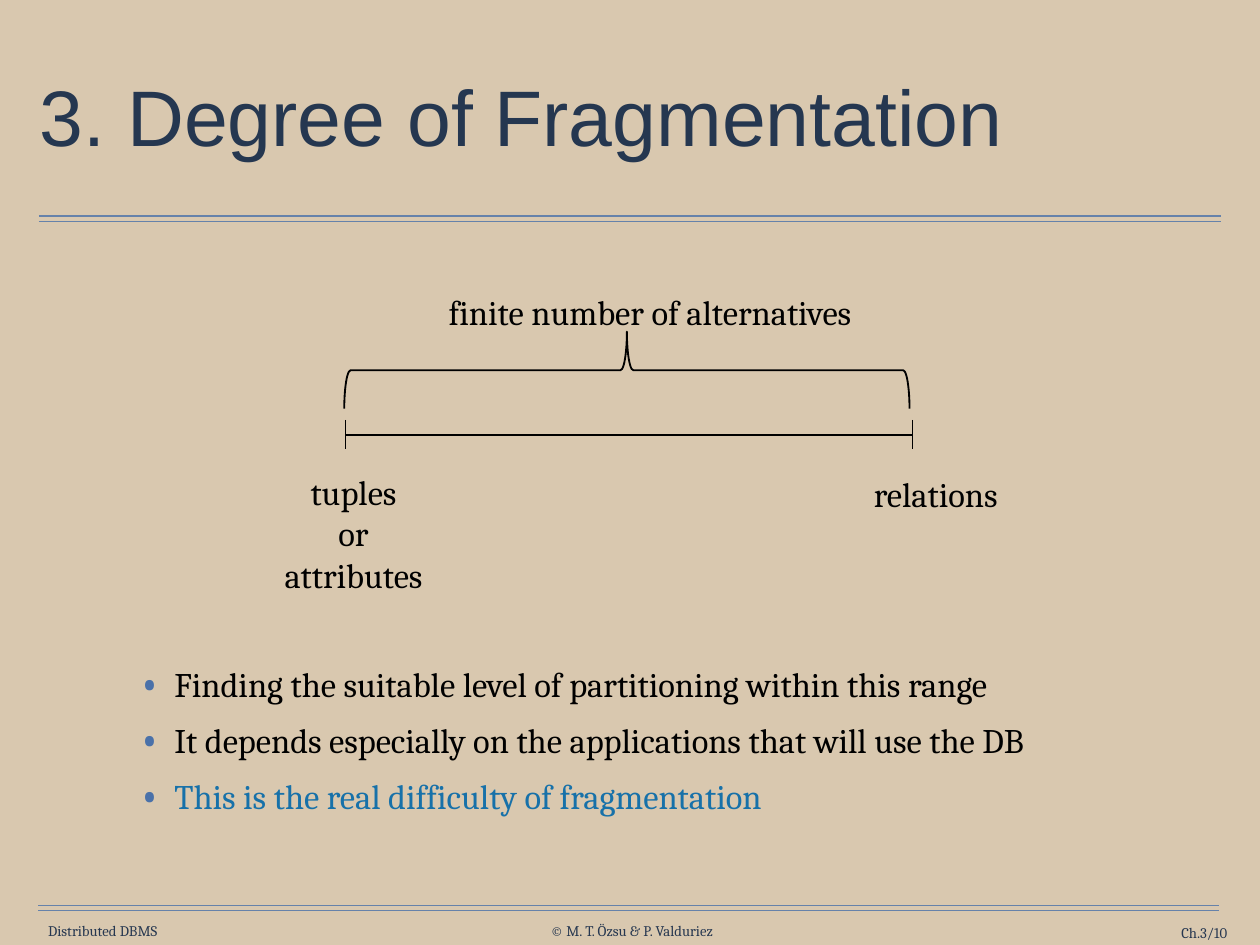
from dataclasses import dataclass

import pptx
import pptx.dml.color
import pptx.enum.shapes
import pptx.enum.text
import pptx.oxml
import pptx.oxml.ns
import pptx.util

ALIGN = pptx.enum.text.PP_ALIGN
ANCHOR = pptx.enum.text.MSO_ANCHOR
PIXELS_PER_INCH = 100


@dataclass(frozen=True)
class Theme:
    background: str = "D9C8AF"
    rule: str = "6682AA"
    heading: str = "253750"
    footer: str = "263750"
    ink: str = "000000"
    accent: str = "1771A9"
    bullet: str = "4A71A9"
    heading_font: str = "Arial"
    body_font: str = "Cambria"
    heading_size: int = 64
    body_size: int = 28
    footer_size: int = 12


@dataclass(frozen=True)
class Box:
    left: int
    top: int
    width: int
    height: int

    def inner(self, left, top, width, height):
        return Box(self.left + left, self.top + top, width, height)

    def lengths(self):
        return [px(value) for value in (self.left, self.top, self.width, self.height)]


THEME = Theme()


def px(value):
    return pptx.util.Emu(value * pptx.util.Inches(1) // PIXELS_PER_INCH)


def color(value):
    return pptx.dml.color.RGBColor.from_string(value)


def add_line(slide, box, line_color, weight):
    line = slide.shapes.add_connector(
        pptx.enum.shapes.MSO_CONNECTOR.STRAIGHT,
        px(box.left), px(box.top),
        px(box.left + box.width), px(box.top + box.height),
    )
    line.line.color.rgb = color(line_color)
    line.line.width = pptx.util.Pt(weight)
    properties = line._element.spPr
    properties.append(pptx.oxml.parse_xml(
        f"<a:effectLst {pptx.oxml.ns.nsdecls('a')}/>"))


def add_double_rule(slide, box):
    for offset in (0, 6):
        add_line(slide, box.inner(0, offset, box.width, 0), THEME.rule, 1)


def set_font(paragraph, name, size, font_color):
    paragraph.font.name = name
    paragraph.font.size = pptx.util.Pt(size)
    paragraph.font.color.rgb = color(font_color)


def add_text(slide, box, lines, size=THEME.body_size, font_color=THEME.ink,
             name=THEME.body_font, align=ALIGN.CENTER, anchor=ANCHOR.TOP,
             margins=(10, 5), wrap=False):
    frame = slide.shapes.add_textbox(*box.lengths()).text_frame
    frame.word_wrap = wrap
    frame.vertical_anchor = anchor
    frame.margin_left = frame.margin_right = px(margins[0])
    frame.margin_top = frame.margin_bottom = px(margins[1])
    frame.text = "\n".join(lines)
    for paragraph in frame.paragraphs:
        paragraph.alignment = align
        set_font(paragraph, name, size, font_color)
    return frame


def add_header(slide, box):
    frame = add_text(
        slide, box.inner(0, 0, box.width, 176), ["3. Degree of Fragmentation"],
        THEME.heading_size, THEME.heading, THEME.heading_font,
        ALIGN.LEFT, ANCHOR.MIDDLE, (6, 6), True)
    frame.paragraphs[0].line_spacing = 0.9
    add_double_rule(slide, box.inner(5, 195, 1334, 6))


def add_range_diagram(slide, box):
    span = 640
    start = 84
    add_line(slide, box.inner(start, 169, span, 0), THEME.ink, 1.5)
    for end in (start, start + span):
        add_line(slide, box.inner(end, 152, 0, 33), THEME.ink, 1)

    add_text(slide, box.inner(0, 205, 186, 151), ["tuples", "or", "attributes"])
    add_text(slide, box.inner(661, 205, 178, 61), ["relations"], margins=(14, 7))
    add_text(slide, box.inner(166, 0, 523, 61),
             ["finite number of alternatives"], margins=(14, 7))

    brace = slide.shapes.add_shape(
        pptx.enum.shapes.MSO_SHAPE.RIGHT_BRACE,
        *box.inner(358, -223, 87, 638).lengths())
    brace.rotation = 270
    brace.shadow.inherit = False
    brace.fill.background()
    brace.line.color.rgb = color(THEME.ink)
    brace.line.width = pptx.util.Pt(1.5)


def add_bullets(slide, box, items):
    frame = add_text(slide, box, [text for text, _ in items],
                     align=ALIGN.LEFT, wrap=True)
    for index, (paragraph, (_, item_color)) in enumerate(zip(frame.paragraphs, items)):
        if index:
            paragraph.space_before = pptx.util.Pt(12)
        properties = paragraph._p.get_or_add_pPr()
        properties.set("marL", str(px(40)))
        properties.set("indent", str(-px(40)))
        namespace = pptx.oxml.ns.nsdecls("a")
        for element in (
            f'<a:buClr {namespace}><a:srgbClr val="{THEME.bullet}"/></a:buClr>',
            f'<a:buSzPct {namespace} val="150000"/>',
            f'<a:buFont {namespace} typeface="{THEME.body_font}"/>',
            f'<a:buChar {namespace} char="•"/>',
        ):
            properties.insert_element_before(
                pptx.oxml.parse_xml(element), "a:tabLst", "a:defRPr", "a:extLst")
        set_font(paragraph, THEME.body_font, THEME.body_size, item_color)


def add_footer(slide, box):
    add_double_rule(slide, box.inner(0, 0, 1333, 6))
    for text, left, top, width, align in (
        ("Distributed DBMS", 4, 19, 138, ALIGN.CENTER),
        ("© M. T. Özsu & P. Valduriez", 566, 19, 208, ALIGN.CENTER),
        ("Ch.3/10", 1188, 21, 154, ALIGN.RIGHT),
    ):
        add_text(slide, box.inner(left, top, width, 20), [text],
                 THEME.footer_size, THEME.footer, align=align,
                 anchor=ANCHOR.MIDDLE, margins=(0, 0),
                 wrap=align == ALIGN.RIGHT)


def main():
    presentation = pptx.Presentation()
    presentation.slide_width = px(1422)
    presentation.slide_height = px(1067)
    slide = presentation.slides.add_slide(presentation.slide_layouts[6])
    slide.background.fill.solid()
    slide.background.fill.fore_color.rgb = color(THEME.background)

    add_header(slide, Box(39, 49, 1344, 201))
    add_range_diagram(slide, Box(306, 322, 839, 356))
    add_bullets(slide, Box(147, 744, 1150, 219), [
        ("Finding the suitable level of partitioning within this range", THEME.ink),
        ("It depends especially on the applications that will use the DB", THEME.ink),
        ("This is the real difficulty of fragmentation", THEME.accent),
    ])
    add_footer(slide, Box(43, 1022, 1342, 41))
    presentation.save("out.pptx")


if __name__ == "__main__":
    main()
